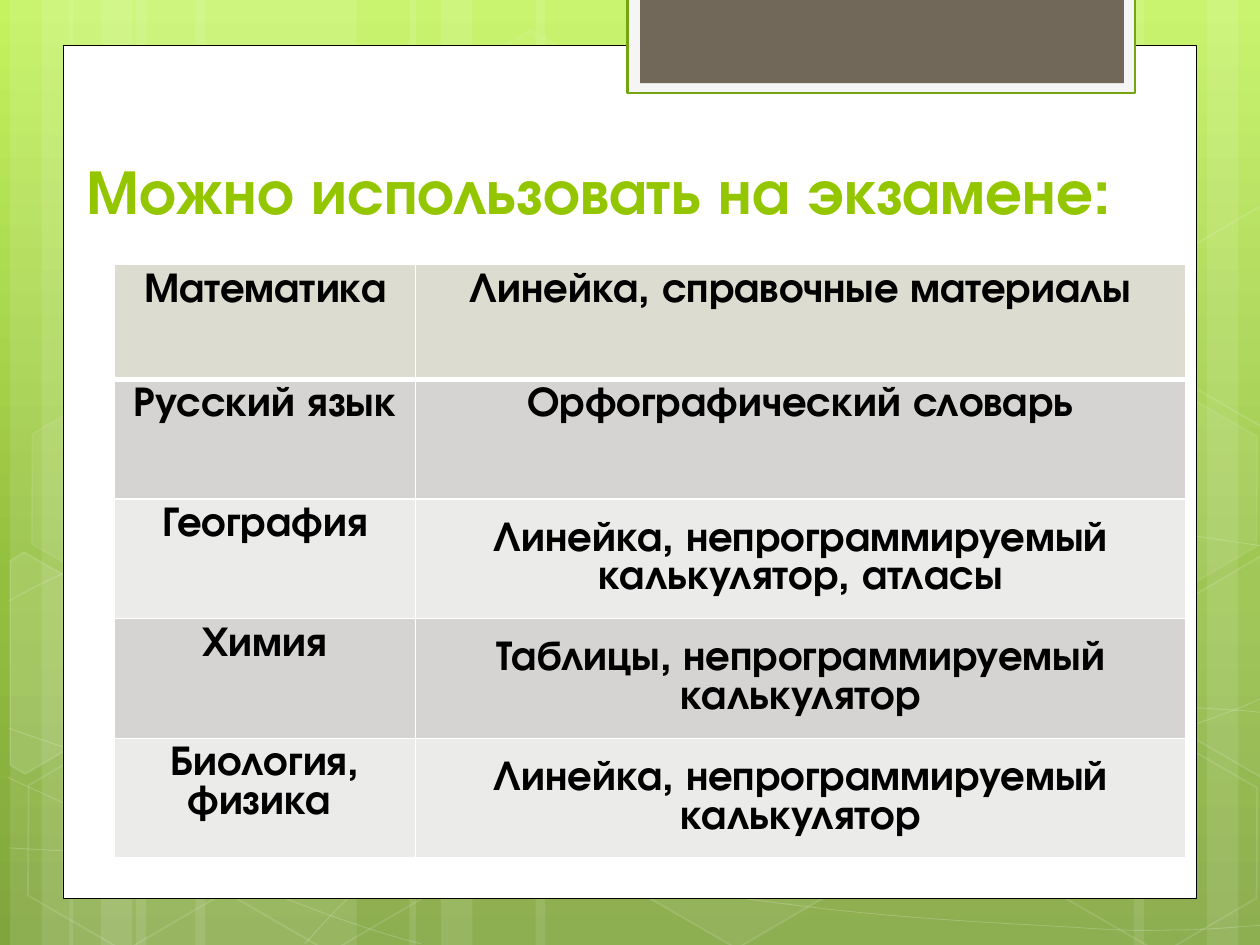
from copy import deepcopy
from math import cos, radians, sin
from typing import NamedTuple

from lxml import etree
from pptx import Presentation
from pptx.dml.color import RGBColor
from pptx.enum import shapes, text
from pptx.oxml.ns import qn
from pptx.util import Inches, Pt

FONT = "TeX Gyre Adventor"
WHITE = "FFFFFF"
SHAPE = shapes.MSO_SHAPE
TILT = 30


class Stripe(NamedTuple):
    left: float
    width: float


class Hexagon(NamedTuple):
    left: float
    top: float
    fill_opacity: int
    line_opacity: int


class Fragment(NamedTuple):
    """A hexagon cut off by the page edge, tilted about its centre."""
    points: list
    center: tuple
    fill_opacity: int


class Subject(NamedTuple):
    name: str
    allowed: str
    fill: str
    anchor: text.MSO_ANCHOR


STRIPES = [
    Stripe(1.08, 1.75), Stripe(0.08, 0.5), Stripe(0.33, 0.83), Stripe(1.55, 1.75),
    Stripe(0.55, 0.5), Stripe(0.8, 0.83), Stripe(7.33, 1.75), Stripe(9.58, 0.5),
    Stripe(9, 0.83), Stripe(4.25, 3.08), Stripe(3.25, 0.5), Stripe(3.5, 0.83),
]
# Each curve is a start point followed by Bezier triples.
CURVES = [
    [(0.07, 6.73), (0.61, 6.76), (1.15, 6.79), (1.9, 6.78), (2.65, 6.77), (3.58, 6.75),
     (4.58, 6.65), (5.58, 6.55), (7, 6.36), (7.92, 6.17), (8.83, 5.98), (9.77, 5.68),
     (10.07, 5.51)],
    [(0.07, 4.77), (0.36, 4.61), (0.65, 4.46), (1.21, 4.31), (1.78, 4.16), (2.59, 3.94),
     (3.47, 3.87), (4.36, 3.8), (5.44, 3.79), (6.54, 3.87), (7.64, 3.95), (9.47, 4.26),
     (10.07, 4.34)],
    [(0.06, 6.17), (1.27, 6.72), (2.47, 7.27), (3.34, 7.49)],
    [(0.07, 5.78), (0.38, 5.89), (0.7, 6), (1.28, 6.16), (1.86, 6.31), (2.73, 6.56),
     (3.57, 6.73), (4.4, 6.9), (5.45, 7.08), (6.28, 7.18), (7.11, 7.29), (8, 7.33),
     (8.53, 7.36), (9.05, 7.4), (9.19, 7.38), (9.45, 7.38), (9.71, 7.37), (9.89, 7.35),
     (10.07, 7.34)],
    [(2.42, 7.49), (2.6, 7.29), (2.78, 7.09), (3.02, 6.91), (3.26, 6.73), (3.6, 6.53),
     (3.88, 6.39), (4.16, 6.25), (4.33, 6.19), (4.7, 6.09), (5.06, 5.99), (5.73, 5.85),
     (6.08, 5.78), (6.44, 5.71), (6.49, 5.71), (6.8, 5.69), (7.11, 5.66), (7.6, 5.63),
     (7.94, 5.62), (8.29, 5.61), (8.86, 5.62), (8.86, 5.62), (8.86, 5.62), (9.53, 5.62),
     (9.53, 5.62), (9.71, 5.63), (9.88, 5.64), (9.97, 5.65), (10.06, 5.66), (10.03, 5.65),
     (10.06, 5.66)],
]
HEXAGONS = [
    Hexagon(3.34, 0.36, 4, 8), Hexagon(4.97, 5.89, 6, 12), Hexagon(0.11, 5.91, 0, 12),
    Hexagon(0.14, 3.12, 7, 8), Hexagon(1.74, 5.92, 0, 12), Hexagon(7.53, 4.53, 10, 12),
    Hexagon(8.34, 5.93, 0, 12), Hexagon(8.34, 3.14, 7, 8),
]
FRAGMENTS = [
    Fragment([(0.08, 4.45), (0.19, 4.38), (0.96, 4.82), (0.95, 5.7), (0.2, 6.14),
              (0.08, 6.07)], (0.36, 5.35), 10),
    Fragment([(9.26, 4.85), (10.01, 4.41), (10.09, 4.46), (10.09, 6.13), (10.02, 6.17),
              (9.26, 5.73)], (9.85, 5.2), 4),
    Fragment([(9.26, 2.07), (10.01, 1.63), (10.1, 1.68), (10.09, 3.35), (10.02, 3.39),
              (9.26, 2.95)], (9.85, 2.41), 0),
]
TOP, MIDDLE = text.MSO_ANCHOR.TOP, text.MSO_ANCHOR.MIDDLE
SUBJECTS = [
    Subject("Математика", "Линейка, справочные материалы", "DDDCD0", TOP),
    Subject("Русский язык", "Орфографический словарь", "D5D4D2", TOP),
    Subject("География", "Линейка, непрограммируемый калькулятор, атласы", "EBEBEA", MIDDLE),
    Subject("Химия", "Таблицы, непрограммируемый калькулятор", "D5D4D2", MIDDLE),
    Subject("Биология, физика ", "Линейка, непрограммируемый калькулятор", "EBEBEA", MIDDLE),
]


def paint(fill, color: str, opacity: int = 100) -> None:
    """Fill with a solid colour; zero opacity means no fill."""
    if not opacity:
        fill.background()
        return
    fill.solid()
    fill.fore_color.rgb = RGBColor.from_string(color)
    if opacity < 100:
        color_node = fill._xPr.find(qn("a:solidFill"))[0]
        etree.SubElement(color_node, qn("a:alpha"), val=str(opacity * 1000))


def style(shape, fill: str = WHITE, fill_opacity: int = 100, line: str = WHITE,
          line_width: float = 0, line_opacity: int = 100) -> None:
    shape.shadow.inherit = False
    paint(shape.fill, fill, fill_opacity)
    paint(shape.line.fill, line, line_opacity if line_width else 0)
    if line_width:
        shape.line.width = Pt(line_width)


def add_preset(page, kind, left: float, top: float, width: float, height: float, **look):
    shape = page.shapes.add_shape(kind, Inches(left), Inches(top), Inches(width), Inches(height))
    style(shape, **look)
    return shape


def add_outline(page, points: list, close: bool, **look):
    start, *rest = [(Inches(x), Inches(y)) for x, y in points]
    builder = page.shapes.build_freeform(*start)
    builder.add_line_segments(rest, close=close)
    shape = builder.convert_to_shape()
    style(shape, **look)
    return shape


def add_curve(page, curve: list) -> None:
    """Outline the end points, then bend each straight segment into a Bezier."""
    shape = add_outline(page, curve[::3], False, fill_opacity=0, line_width=0.5, line_opacity=20)
    segments = list(shape._element.iter(qn("a:lnTo")))
    for index, segment in enumerate(segments):
        segment.tag = qn("a:cubicBezTo")
        controls = curve[3 * index + 1:3 * index + 3]
        for place, (x, y) in enumerate(controls):
            point = etree.Element(qn("a:pt"), x=str(Inches(x) - shape.left),
                                  y=str(Inches(y) - shape.top))
            segment.insert(place, point)


def add_fragment(page, item: Fragment) -> None:
    """Turn the points back by the tilt, so that the rotation restores them."""
    turn = radians(-TILT)
    center_x, center_y = item.center
    offsets = [(x - center_x, y - center_y) for x, y in item.points]
    upright = [(center_x + dx * cos(turn) - dy * sin(turn),
                center_y + dx * sin(turn) + dy * cos(turn)) for dx, dy in offsets]
    shape = add_outline(page, upright, True, fill_opacity=item.fill_opacity,
                        line_width=1, line_opacity=12)
    shape.rotation = TILT


def write(frame, words: str, size: float, color: str, align=text.PP_ALIGN.LEFT,
          anchor=text.MSO_ANCHOR.TOP) -> None:
    frame.word_wrap = True
    frame.vertical_anchor = anchor
    para = frame.paragraphs[0]
    para.alignment = align
    span = para.add_run()
    span.text = words
    span.font.name, span.font.size, span.font.bold = FONT, Pt(size), True
    span.font.color.rgb = RGBColor.from_string(color)


def set_borders(cell, **widths: float) -> None:
    """Draw white borders, named by side in the order L, R, T, B."""
    props = cell._tc.get_or_add_tcPr()
    for place, (side, width) in enumerate(widths.items()):
        edge = etree.Element(qn(f"a:ln{side}"), w=str(Pt(width)))
        solid = etree.SubElement(edge, qn("a:solidFill"))
        etree.SubElement(solid, qn("a:srgbClr"), val=WHITE)
        props.insert(place, edge)


def draw_background(page) -> None:
    fill = page.background.fill
    fill.gradient()
    fill.gradient_angle = 270
    stop_list = page._element.find(".//" + qn("a:gsLst"))
    stop_list.append(deepcopy(stop_list[-1]))
    colors = [(0, "C3F35F"), (0.62, "93BF3F"), (1, "81A53E")]
    for stop, (position, color) in zip(fill.gradient_stops, colors):
        stop.position = position
        stop.color.rgb = RGBColor.from_string(color)
    for stripe in STRIPES:
        add_preset(page, SHAPE.RECTANGLE, stripe.left, 0, stripe.width, 7.5, fill_opacity=10)
    for curve in CURVES:
        add_curve(page, curve)
    for item in HEXAGONS:
        hexagon = add_preset(page, SHAPE.HEXAGON, item.left, item.top, 1.75, 1.52, line_width=1,
                             fill_opacity=item.fill_opacity, line_opacity=item.line_opacity)
        hexagon.adjustments[0], hexagon.adjustments[1] = 0.285, 1.155
        hexagon.rotation = TILT
    for item in FRAGMENTS:
        add_fragment(page, item)


def draw_subjects(page) -> None:
    frame = page.shapes.add_table(len(SUBJECTS), 2, Inches(0.91), Inches(2.1),
                                  Inches(8.5), Inches(4.72))
    table = frame.table
    table.first_row = table.horz_banding = False
    for column, width in zip(table.columns, (2.39, 6.11)):
        column.width = Inches(width)
    for index, subject in enumerate(SUBJECTS):
        table.rows[index].height = Inches(0.95 if index else 0.91)
        anchors = (TOP, subject.anchor)
        for cell, words, anchor in zip(table.rows[index].cells, subject[:2], anchors):
            write(cell.text_frame, words, 24, "000000", align=text.PP_ALIGN.CENTER)
            cell.vertical_anchor = anchor
            paint(cell.fill, subject.fill)
            set_borders(cell, L=1, R=1, T=3 if index == 1 else 1, B=1 if index else 3)


def main() -> None:
    deck = Presentation()
    deck.slide_width, deck.slide_height = Inches(10), Inches(7.5)
    page = deck.slides.add_slide(deck.slide_layouts[6])
    draw_background(page)
    add_preset(page, SHAPE.RECTANGLE, 0.5, 0.36, 9, 6.77, line="000000", line_width=0.5)
    add_preset(page, SHAPE.RECTANGLE, 4.98, -0.02, 4.03, 0.76, fill="F5F5F5",
               line="74A510", line_width=1.25)
    add_preset(page, SHAPE.RECTANGLE, 5.08, -0.02, 3.84, 0.68, fill="71685A")
    box = page.shapes.add_textbox(Inches(0.59), Inches(0.6), Inches(8.55), Inches(1.25))
    write(box.text_frame, "Можно использовать на экзамене:", 36, "94C600",
          anchor=text.MSO_ANCHOR.BOTTOM)
    draw_subjects(page)
    deck.save("out.pptx")


if __name__ == "__main__":
    main()
